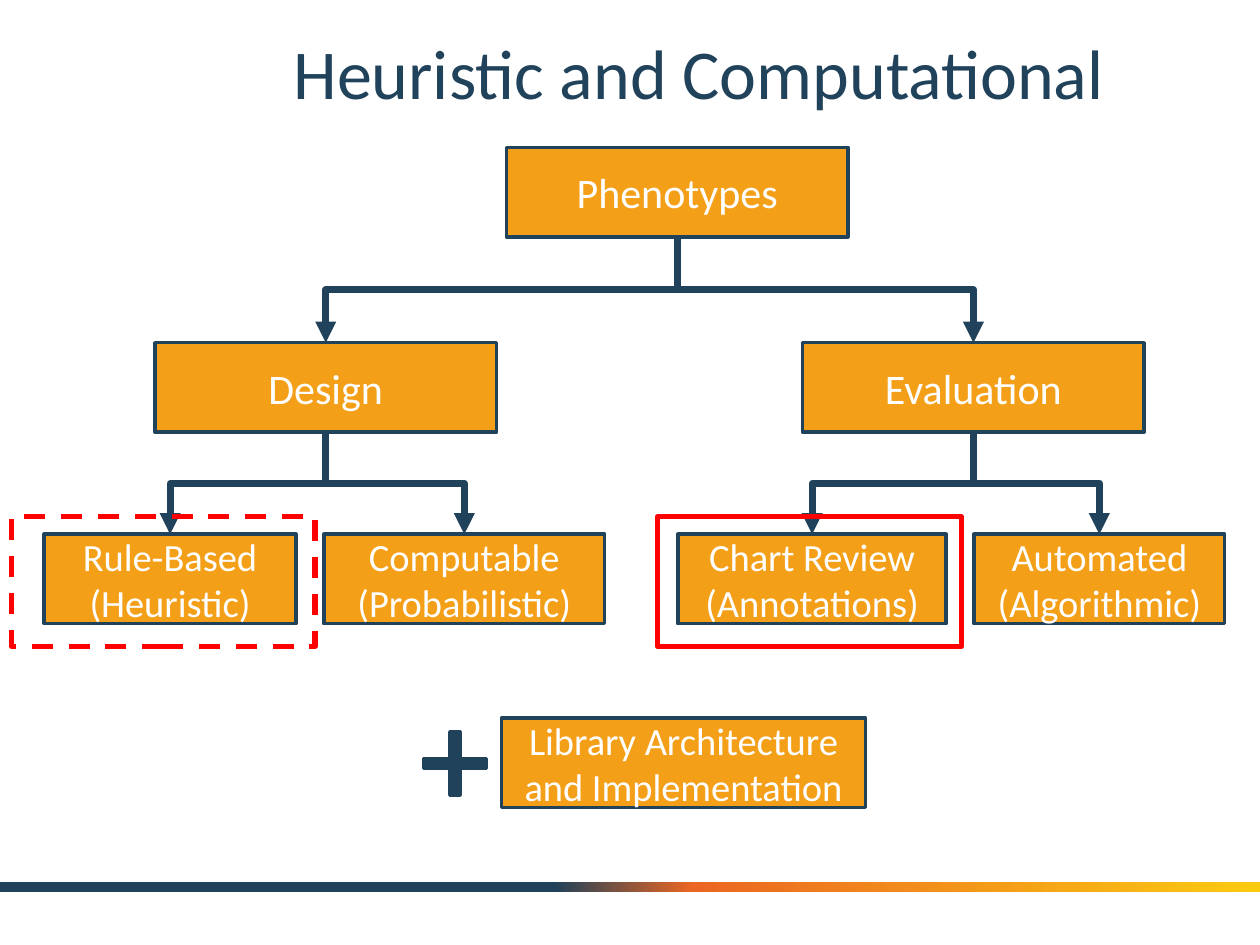
"""Build a slide showing the tree of phenotype design and evaluation methods."""
from dataclasses import dataclass
from copy import deepcopy

from lxml.etree import SubElement
from pptx import Presentation
from pptx.dml.color import RGBColor
from pptx.enum.dml import MSO_LINE
from pptx.enum.shapes import MSO_CONNECTOR, MSO_SHAPE
from pptx.enum.text import MSO_ANCHOR, PP_ALIGN
from pptx.oxml.ns import qn
from pptx.util import Inches, Pt

COLUMNS, ROWS = 100, 75
PAGE_WIDTH, PAGE_HEIGHT = Inches(10), Inches(7.5)


@dataclass(frozen=True)
class Theme:
    """Colours, font and point sizes of the slide."""
    navy: RGBColor = RGBColor(0x20, 0x42, 0x5A)
    amber: RGBColor = RGBColor(0xF4, 0x9F, 0x18)
    orange: RGBColor = RGBColor(0xEB, 0x66, 0x22)
    yellow: RGBColor = RGBColor(0xFC, 0xCB, 0x10)
    red: RGBColor = RGBColor(0xFF, 0, 0)
    white: RGBColor = RGBColor(0xFF, 0xFF, 0xFF)
    font: str = "Calibri"
    title: int = 40
    branch: int = 24
    leaf: int = 22
    outline: int = 2
    frame: int = 3
    arrow: int = 4


@dataclass(frozen=True)
class Area:
    """A rectangle in grid columns and rows."""
    column: float
    row: float
    width: float
    height: float

    def lengths(self) -> tuple:
        """Return left, top, width and height as slide lengths."""
        across, down = PAGE_WIDTH / COLUMNS, PAGE_HEIGHT / ROWS
        return (round(self.column * across), round(self.row * down),
                round(self.width * across), round(self.height * down))


@dataclass(frozen=True)
class Node:
    """A labelled box of the tree, with the name of its parent."""
    name: str
    lines: tuple
    area: Area
    size: int
    parent: str = ""


THEME = Theme()
BOX_HEIGHT = 7.1
BRANCH_WIDTH = 27.1
TOP_ROW, MIDDLE_ROW, LEAF_ROW, LIBRARY_ROW = 11.7, 27.2, 42.4, 57


def branch(name: str, column: float, row: float, parent: str = "") -> Node:
    """Describe one of the wide upper boxes."""
    return Node(name, (name,), Area(column, row, BRANCH_WIDTH, BOX_HEIGHT), THEME.branch, parent)


def leaf(name: str, kind: str, column: float, width: float, parent: str) -> Node:
    """Describe one of the two-line lower boxes."""
    return Node(name, (name, f"({kind})"), Area(column, LEAF_ROW, width, BOX_HEIGHT),
                THEME.leaf, parent)


NODES = (
    branch("Phenotypes", 40.2, TOP_ROW),
    branch("Design", 12.3, MIDDLE_ROW, "Phenotypes"),
    branch("Evaluation", 63.7, MIDDLE_ROW, "Phenotypes"),
    leaf("Rule-Based", "Heuristic", 3.5, 20, "Design"),
    leaf("Computable", "Probabilistic", 25.7, 22.3, "Design"),
    leaf("Chart Review", "Annotations", 53.8, 21.3, "Evaluation"),
    leaf("Automated", "Algorithmic", 77.3, 19.9, "Evaluation"),
    Node("Library", ("Library Architecture and Implementation",),
         Area(39.8, LIBRARY_ROW, 28.9, BOX_HEIGHT), THEME.leaf),
)


def apply(target, values: dict) -> None:
    """Set each attribute of the target from a dict."""
    for name, value in values.items():
        setattr(target, name, value)


def write(box, lines: tuple, size: int, color: RGBColor) -> None:
    """Write centred lines in one paragraph of a box."""
    apply(box.text_frame, {"word_wrap": True, "vertical_anchor": MSO_ANCHOR.MIDDLE})
    para = box.text_frame.paragraphs[0]
    para.alignment = PP_ALIGN.CENTER
    for index, line in enumerate(lines):
        if index:
            para.add_line_break()
        span = para.add_run()
        span.text = line
        apply(span.font, {"name": THEME.font, "size": Pt(size)})
        span.font.color.rgb = color


def draw_shape(page, area: Area, fill=None, line=None, width: int = THEME.outline,
               kind=MSO_SHAPE.RECTANGLE):
    """Draw a flat preset shape with optional fill and outline."""
    box = page.shapes.add_shape(kind, *area.lengths())
    box.shadow.inherit = False
    for paint, color in ((box.fill, fill), (box.line.fill, line)):
        if color is None:
            paint.background()
        else:
            paint.solid()
            paint.fore_color.rgb = color
    if line is not None:
        box.line.width = Pt(width)
    return box


def draw_node(page, node: Node):
    """Draw one labelled box."""
    box = draw_shape(page, node.area, THEME.amber, THEME.navy)
    write(box, node.lines, node.size, THEME.white)
    return box


def draw_branch(page, parent, child) -> None:
    """Draw an elbow arrow from the foot of the parent to the head of the child."""
    start, end = parent.left + parent.width // 2, child.left + child.width // 2
    top, bottom = parent.top + parent.height, child.top
    drop, reach = bottom - top, abs(end - start)
    link = page.shapes.add_connector(MSO_CONNECTOR.ELBOW, start, top, end, bottom)
    link.begin_connect(parent, 2)
    link.end_connect(child, 0)
    apply(link, {"left": (start + end - drop) // 2, "top": (top + bottom - reach) // 2,
                 "width": drop, "height": reach})
    leftward = end < start
    frame = link.element.spPr.find(qn("a:xfrm"))
    frame.set("rot", str((90 if leftward else 270) * 60000))
    frame.set("flipH", "0" if leftward else "1")
    link.line.color.rgb = THEME.navy
    link.line.width = Pt(THEME.arrow)
    SubElement(link.line._get_or_add_ln(), qn("a:tailEnd"), type="triangle")
    SubElement(link.element.spPr, qn("a:effectLst"))


def draw_band(page) -> None:
    """Draw the gradient band near the foot of the page."""
    band = draw_shape(page, Area(0, 70, COLUMNS, 0.8))
    band.fill.gradient()
    band.fill.gradient_angle = 0
    first = band.fill._fill._gradFill.find(qn("a:gsLst"))[0]
    first.addnext(deepcopy(first))
    colors = ((0.44, THEME.navy), (0.55, THEME.orange), (1, THEME.yellow))
    for stop, (position, color) in zip(band.fill.gradient_stops, colors):
        stop.position = position
        stop.color.rgb = color


def main() -> None:
    """Build and save the deck."""
    deck = Presentation()
    apply(deck, {"slide_width": PAGE_WIDTH, "slide_height": PAGE_HEIGHT})
    page = deck.slides.add_slide(deck.slide_layouts[6])
    draw_band(page)
    boxes = {node.name: draw_node(page, node) for node in NODES}
    for node in NODES:
        if node.parent:
            draw_branch(page, boxes[node.parent], boxes[node.name])
    plus = draw_shape(page, Area(33.6, 58.1, 5, 5), THEME.navy, THEME.navy, kind=MSO_SHAPE.CROSS)
    plus.adjustments[0] = 0.42
    title = page.shapes.add_textbox(*Area(14.2, 1.1, 82.5, 9.2).lengths())
    write(title, ("Heuristic and Computational",), THEME.title, THEME.navy)
    for column, dash in ((52.2, None), (0.9, MSO_LINE.DASH)):
        frame = draw_shape(page, Area(column, 41, 24.1, 10.3), line=THEME.red, width=THEME.frame)
        frame.line.dash_style = dash
    deck.save("out.pptx")


if __name__ == "__main__":
    main()
